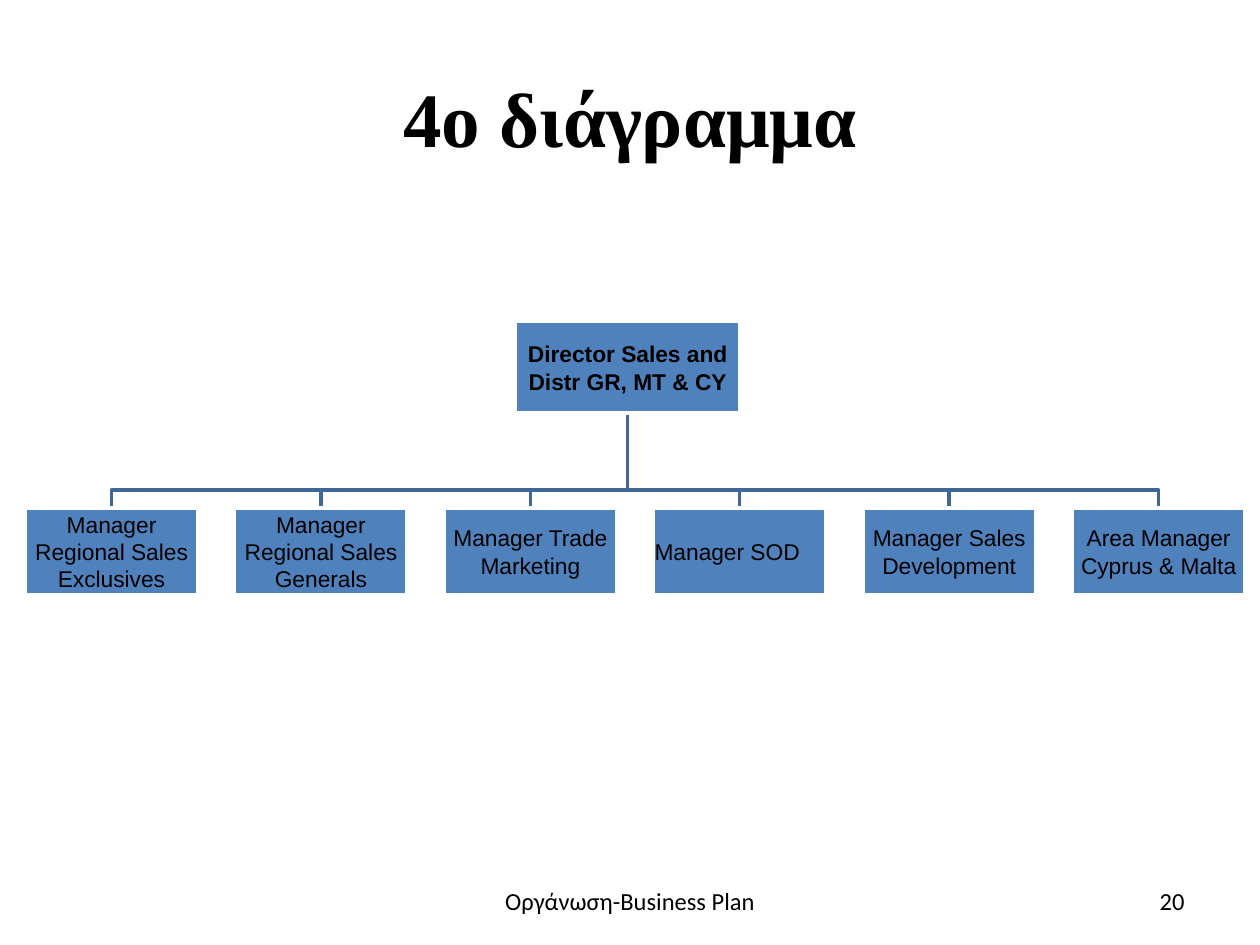
from pptx import Presentation
from pptx.dml.color import RGBColor
from pptx.enum.shapes import MSO_SHAPE
from pptx.enum.text import MSO_ANCHOR, PP_ALIGN
from pptx.util import Inches, Pt

COLORS = {"box": "4F81BD", "branch": "3F6797", "edge": "FFFFFF", "text": "000000"}

# Chart grid, in inches
DIRECTOR_BOX = (4.09, 2.55, 1.78, 0.73)
MANAGER_TOP, MANAGER_WIDTH, MANAGER_HEIGHT = 4.03, 1.37, 0.69
FIRST_LEFT, LAST_LEFT = 0.2, 8.51
BUS_Y = 3.89

DIRECTOR = "Director Sales and Distr GR, MT & CY"
MANAGERS = [
    ("Manager Regional Sales Exclusives", PP_ALIGN.CENTER),
    ("Manager Regional Sales Generals", PP_ALIGN.CENTER),
    ("Manager Trade Marketing", PP_ALIGN.CENTER),
    ("Manager SOD", PP_ALIGN.LEFT),
    ("Manager Sales Development", PP_ALIGN.CENTER),
    ("Area Manager Cyprus & Malta", PP_ALIGN.CENTER),
]


def color(name):
    return RGBColor.from_string(COLORS[name])


def place(shape, box):
    shape.left, shape.top, shape.width, shape.height = map(Inches, box)


def write(shape, text, font_name, size, align, bold=False):
    frame = shape.text_frame
    frame.word_wrap = True
    frame.vertical_anchor = MSO_ANCHOR.MIDDLE
    paragraph = frame.paragraphs[0]
    paragraph.text = text
    paragraph.alignment = align
    font = paragraph.font
    font.name, font.size, font.bold = font_name, Pt(size), bold
    font.color.rgb = color("text")


def set_line(shape, name):
    shape.line.color.rgb = color(name)
    shape.line.width = Pt(2)
    shape.shadow.inherit = False


def add_position(slide, text, box, align=PP_ALIGN.CENTER, bold=False):
    position = slide.shapes.add_shape(MSO_SHAPE.RECTANGLE, *map(Inches, box))
    position.fill.solid()
    position.fill.fore_color.rgb = color("box")
    set_line(position, "edge")
    write(position, text, "Arial", 13, align, bold)
    frame = position.text_frame
    frame.margin_left = frame.margin_right = Inches(0.01)
    frame.margin_top = frame.margin_bottom = Inches(0.01)


def add_branch(slide, start, end):
    """Draw an elbow line from the director down to one manager."""
    start_x, start_y = map(Inches, start)
    end_x, end_y = map(Inches, end)
    bus_y = Inches(BUS_Y)
    # The builder rounds to whole units, so it works in EMU
    builder = slide.shapes.build_freeform(start_x, start_y)
    builder.add_line_segments(
        [(start_x, bus_y), (end_x, bus_y), (end_x, end_y)], close=False
    )
    branch = builder.convert_to_shape()
    branch.fill.background()
    set_line(branch, "branch")


def add_footer(slide, text, box, align):
    footer = slide.shapes.add_textbox(*map(Inches, box))
    write(footer, text, "Calibri", 14, align)


def add_org_chart(slide):
    left, top, width, height = DIRECTOR_BOX
    director_bottom = (left + width / 2, top + height)
    pitch = (LAST_LEFT - FIRST_LEFT) / (len(MANAGERS) - 1)
    lefts = [FIRST_LEFT + column * pitch for column in range(len(MANAGERS))]

    # Branches lie behind the boxes
    for manager_left in reversed(lefts):
        manager_top = (manager_left + MANAGER_WIDTH / 2, MANAGER_TOP)
        add_branch(slide, director_bottom, manager_top)

    add_position(slide, DIRECTOR, DIRECTOR_BOX, bold=True)
    for manager_left, (role, align) in zip(lefts, MANAGERS):
        box = (manager_left, MANAGER_TOP, MANAGER_WIDTH, MANAGER_HEIGHT)
        add_position(slide, role, box, align)


def main():
    presentation = Presentation()
    presentation.slide_width, presentation.slide_height = Inches(10), Inches(7.5)
    slide = presentation.slides.add_slide(presentation.slide_layouts[5])

    # Title
    title = slide.shapes.title
    place(title, (0.5, 0.3, 9, 1.25))
    write(title, "4ο διάγραμμα", "Times New Roman", 44, PP_ALIGN.CENTER, bold=True)

    add_org_chart(slide)

    # Footer and slide number
    add_footer(slide, "Οργάνωση-Business Plan", (3.34, 6.95, 3.32, 0.4), PP_ALIGN.CENTER)
    add_footer(slide, "20", (7.17, 6.95, 2.33, 0.4), PP_ALIGN.RIGHT)

    presentation.save("out.pptx")


if __name__ == "__main__":
    main()
